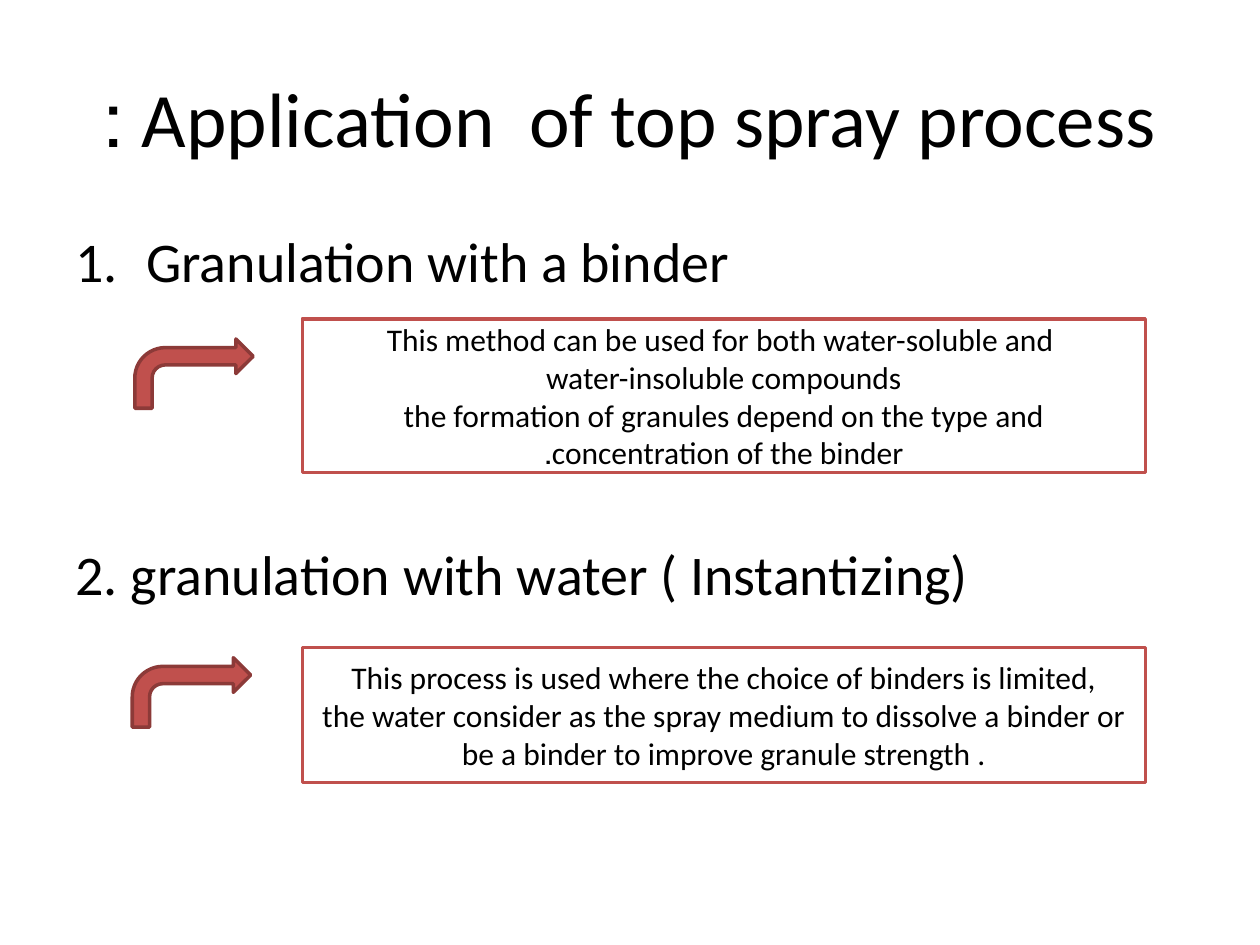
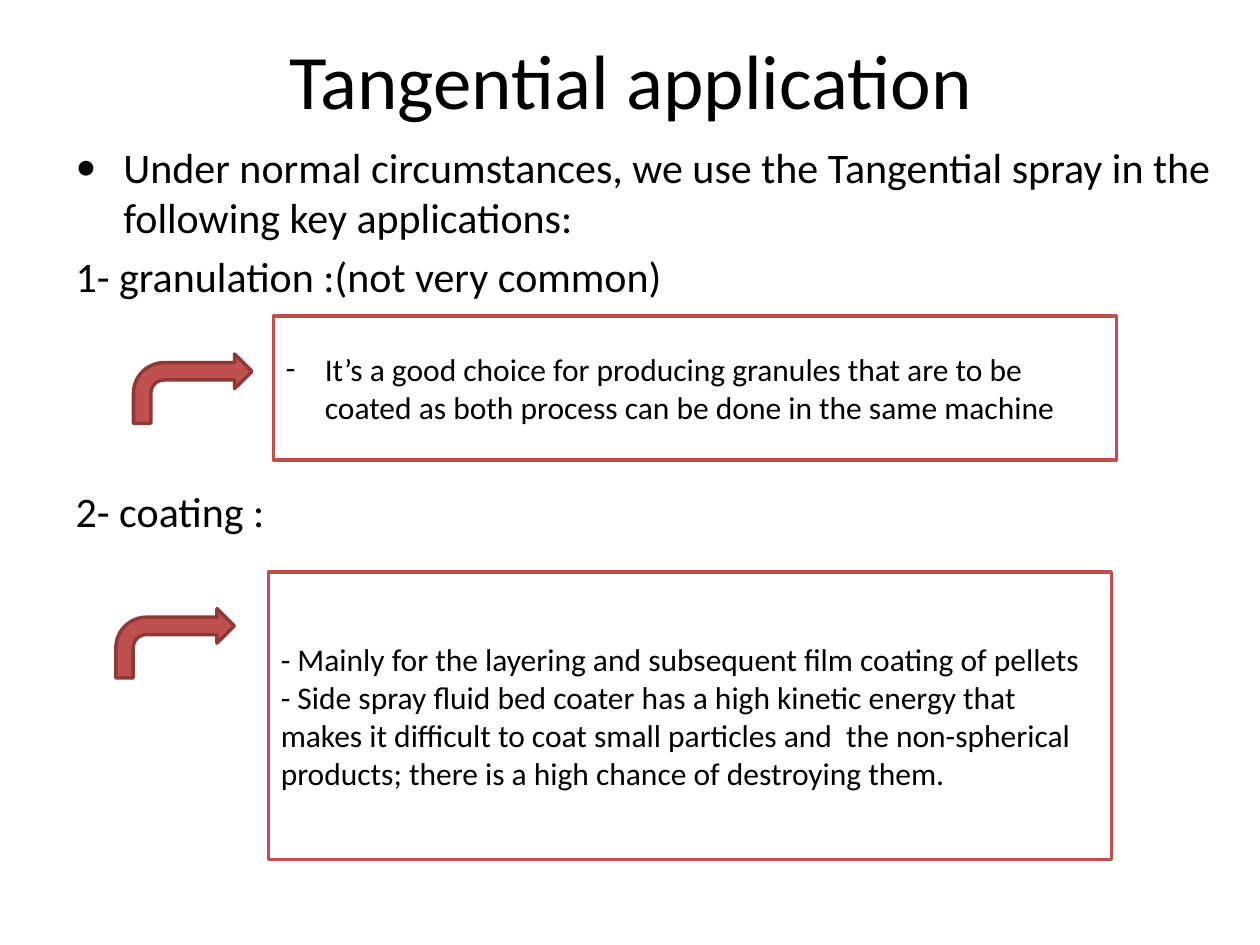
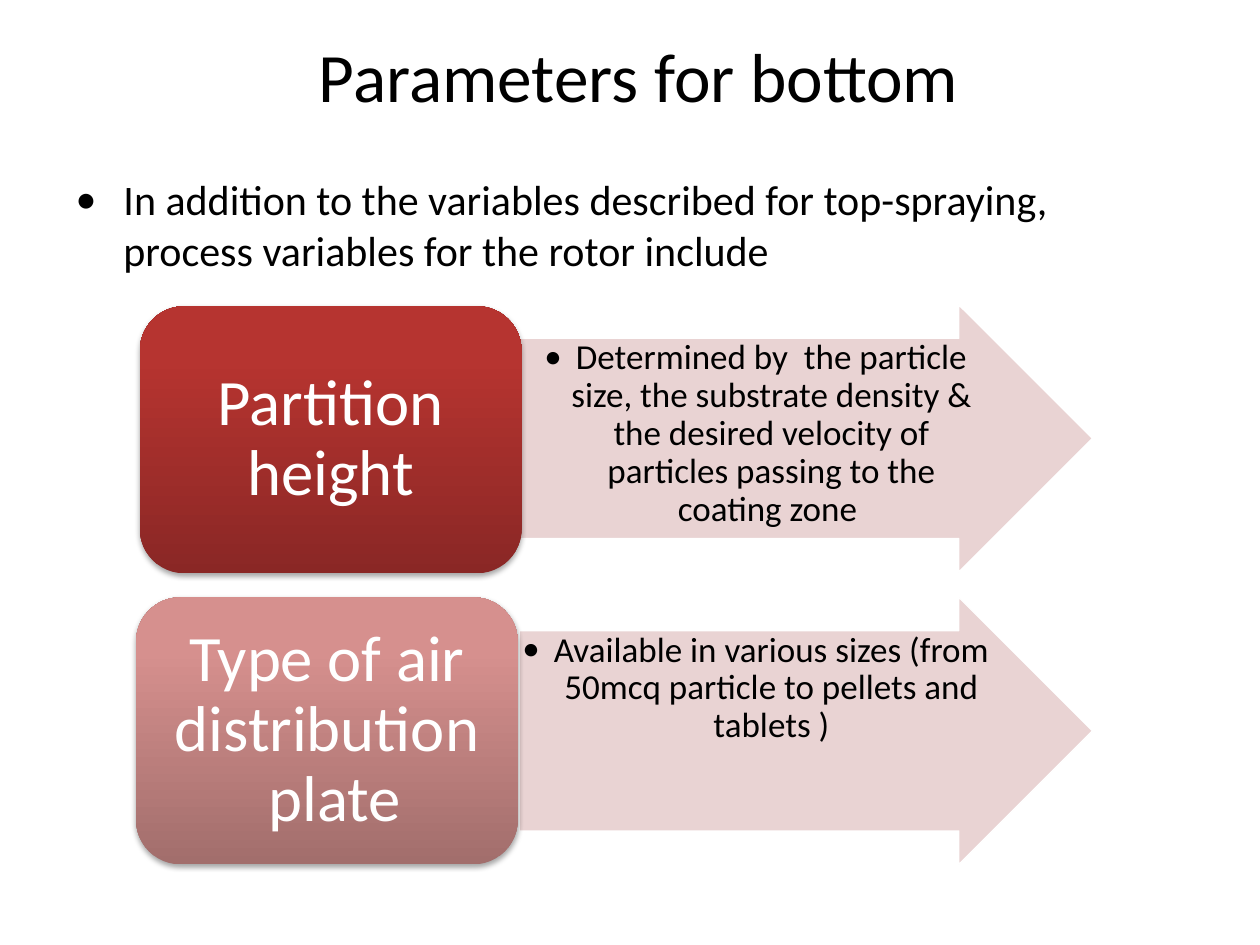
"""Build three slides on fluid bed spray processes."""
import pptx
import pptx.dml.color
import pptx.enum.shapes
import pptx.enum.text
import pptx.oxml
import pptx.oxml.ns
import pptx.util

Inches = pptx.util.Inches
Pt = pptx.util.Pt
KIND = pptx.enum.shapes.MSO_SHAPE
ALIGN = pptx.enum.text.PP_ALIGN
ANCHOR = pptx.enum.text.MSO_ANCHOR
NS = pptx.oxml.ns.nsdecls("a")
RED, DARK, ROSE, BLACK, WHITE = "C0504D", "8C3A38", "E7CFCF", "000000", "FFFFFF"


def paint(fill, code):
    """Give a fill one solid colour."""
    fill.solid()
    fill.fore_color.rgb = pptx.dml.color.RGBColor.from_string(code)


def style(para, size, code=BLACK, align=None, rtl=False, mark=None, indent=0):
    """Format a paragraph, its bullet and its runs."""
    props = para._p.get_or_add_pPr()
    para.alignment = align
    if rtl:
        props.set("rtl", "1")
    props.set("marL", str(Inches(indent)))
    props.set("indent", str(-Inches(indent)))
    if mark is None:
        tags = ["<a:buNone {}/>"]
    elif mark == "1.":
        tags = ['<a:buFont {} typeface="+mj-lt"/>', '<a:buAutoNum {} type="arabicPeriod"/>']
    else:
        tags = ['<a:buClr {}><a:srgbClr val="' + code + '"/></a:buClr>',
                '<a:buFont {} typeface="Calibri"/>',
                '<a:buChar {} char="' + mark + '"/>']
    for tag in tags:
        props.append(pptx.oxml.parse_xml(tag.format(NS)))
    for run in para.runs:
        run.font.name = "Calibri"
        run.font.size = Pt(size)
        paint(run.font.fill, code)


deck = pptx.Presentation()
deck.slide_width, deck.slide_height = Inches(10), Inches(7.5)

pages = [
    ("Application  of top spray process :", 44, (0.5, 0.3, 9, 1.25), (0.5, 1.75, 9, 4.95), 32,
     [("Granulation with a binder", "1.", 0.56, 0),
      ("2. granulation with water ( Instantizing)", None, 0, 140.5)]),
    ("Tangential application ", 44, (0.43, 0, 9, 1.25), (0.5, 1.07, 9.3, 6.43), 24,
     [("Under normal circumstances, we use the Tangential spray in the following key applications:",
       "•", 0.38, 0),
      ("1- granulation :(not very common)", None, 0, 4.8),
      ("2- coating :", None, 0, 105.5)]),
    ("Parameters for bottom ", 39.6, (0.5, 0.26, 9, 1.25), (0.5, 1.33, 9, 4.95), 24,
     [("In addition to the variables described for top-spraying, process variables for the rotor include",
       "•", 0.38, 0)]),
]
slides = []
for head, size, place, area, scale, items in pages:
    slide = deck.slides.add_slide(deck.slide_layouts[1])
    slides.append(slide)
    title, body = slide.placeholders
    for holder, rect in ((title, place), (body, area)):
        holder.left, holder.top, holder.width, holder.height = map(Inches, rect)
    title.text_frame.text = head
    style(title.text_frame.paragraphs[0], size, align=ALIGN.CENTER, rtl=True)
    body.text_frame.text = "\n".join(item[0] for item in items)
    for para, (_, mark, indent, gap) in zip(body.text_frame.paragraphs, items):
        para.space_before = Pt(gap)
        style(para, scale, mark=mark, indent=indent)

frame = slides[2].shapes.title.text_frame
frame.vertical_anchor = ANCHOR.TOP
frame.margin_top = 0

notes = [
    (0, (1.07, 2.69), (2.4, 2.53, 1.22), ALIGN.CENTER, None,
     [("This method can be used for both water-soluble and ", False),
      ("water-insoluble compounds", True),
      ("the formation of granules depend on the type and concentration of the binder.", True)]),
    (0, (1.05, 5.22), (2.4, 5.14, 1.07), ALIGN.CENTER, None,
     [("This process is used where the choice of binders is limited,", False),
      ("the water consider as the spray medium to dissolve a binder or be a binder to improve "
       "granule strength .", False)]),
    (1, (1.06, 2.81), (2.17, 2.51, 1.14), ALIGN.LEFT, "-",
     [("It’s a good choice for producing granules that are to be coated as both process can be "
       "done in the same machine", False)]),
    (1, (0.92, 4.83), (2.13, 4.54, 2.28), ALIGN.LEFT, None,
     [("- Mainly for the layering and subsequent film coating of pellets", False),
      ("- Side spray fluid bed coater has a high kinetic energy that makes it difficult to coat "
       "small particles and  the non-spherical products; there is a high chance of destroying "
       "them.", False)]),
]
for page, (x, y), (left, top, high), align, mark, lines in notes:
    shapes = slides[page].shapes
    bend = shapes.add_shape(KIND.BENT_ARROW, Inches(x), Inches(y), Inches(0.94), Inches(0.55))
    bend.adjustments[3] = 0.44
    box = shapes.add_shape(KIND.RECTANGLE, Inches(left), Inches(top), Inches(6.69), Inches(high))
    for shape, fill, edge in ((bend, RED, DARK), (box, WHITE, RED)):
        shape.shadow.inherit = False
        paint(shape.fill, fill)
        paint(shape.line.fill, edge)
        shape.line.width = Pt(2)
    box.text_frame.text = "\n".join(text for text, _ in lines)
    box.text_frame.vertical_anchor = ANCHOR.MIDDLE
    for para, (_, rtl) in zip(box.text_frame.paragraphs, lines):
        style(para, 18, align=align, rtl=rtl, mark=mark, indent=0.31 if mark else 0)

shade = (f'<a:outerShdw {NS} blurRad="{Pt(3.1)}" dist="{Pt(1.8)}" dir="5400000" rotWithShape="0">'
         '<a:srgbClr val="000000"><a:alpha val="35000"/></a:srgbClr></a:outerShdw>')
factors = [
    ("Partition height", 1.11, 2.43, 2.42, ("8A2725", "B63430"),
     "Determined by  the particle size, the substrate density & the desired velocity of "
     "particles passing to the coating zone "),
    ("Type of air distribution plate ", 1.08, 4.74, 4.74, ("A26E6C", "D6908E"),
     "Available in various sizes (from 50mcq particle to pellets and tablets )"),
]
shapes = slides[2].shapes
for name, left, top, tip, tones, text in factors:
    arrow = shapes.add_shape(KIND.RIGHT_ARROW, Inches(4.12), Inches(tip), Inches(4.55), Inches(2.12))
    arrow.adjustments[0] = 0.75
    arrow.shadow.inherit = False
    paint(arrow.fill, ROSE)
    tone = arrow._element.spPr.find(".//" + pptx.oxml.ns.qn("a:srgbClr"))
    tone.append(pptx.oxml.parse_xml(f'<a:alpha {NS} val="90000"/>'))
    paint(arrow.line.fill, WHITE)
    arrow.line.width = Pt(0.75)
    card = shapes.add_shape(KIND.ROUNDED_RECTANGLE, Inches(left), Inches(top), Inches(3.03), Inches(2.12))
    card.shadow.inherit = False
    card._element.spPr.find(pptx.oxml.ns.qn("a:effectLst")).append(pptx.oxml.parse_xml(shade))
    card.fill.gradient()
    card.fill.gradient_angle = 90
    for stop, code, spot in zip(card.fill.gradient_stops, tones, (0, 0.8)):
        stop.color.rgb = pptx.dml.color.RGBColor.from_string(code)
        stop.position = spot
    card.line.fill.background()
    for shape, words, anchor, pads in (
            (arrow, text, ANCHOR.TOP, (0.01, 0.01, 0.01, 0.01)),
            (card, name, ANCHOR.MIDDLE, (0.15, 0.08, 0.15, 0.08))):
        frame = shape.text_frame
        frame.text = words
        frame.vertical_anchor = anchor
        frame.margin_left, frame.margin_top, frame.margin_right, frame.margin_bottom = map(Inches, pads)
        frame.paragraphs[0].line_spacing = 0.9
    style(arrow.text_frame.paragraphs[0], 20, align=ALIGN.CENTER, mark="•", indent=0.25)
    style(card.text_frame.paragraphs[0], 37, WHITE, ALIGN.CENTER, rtl=True)

deck.save("out.pptx")
